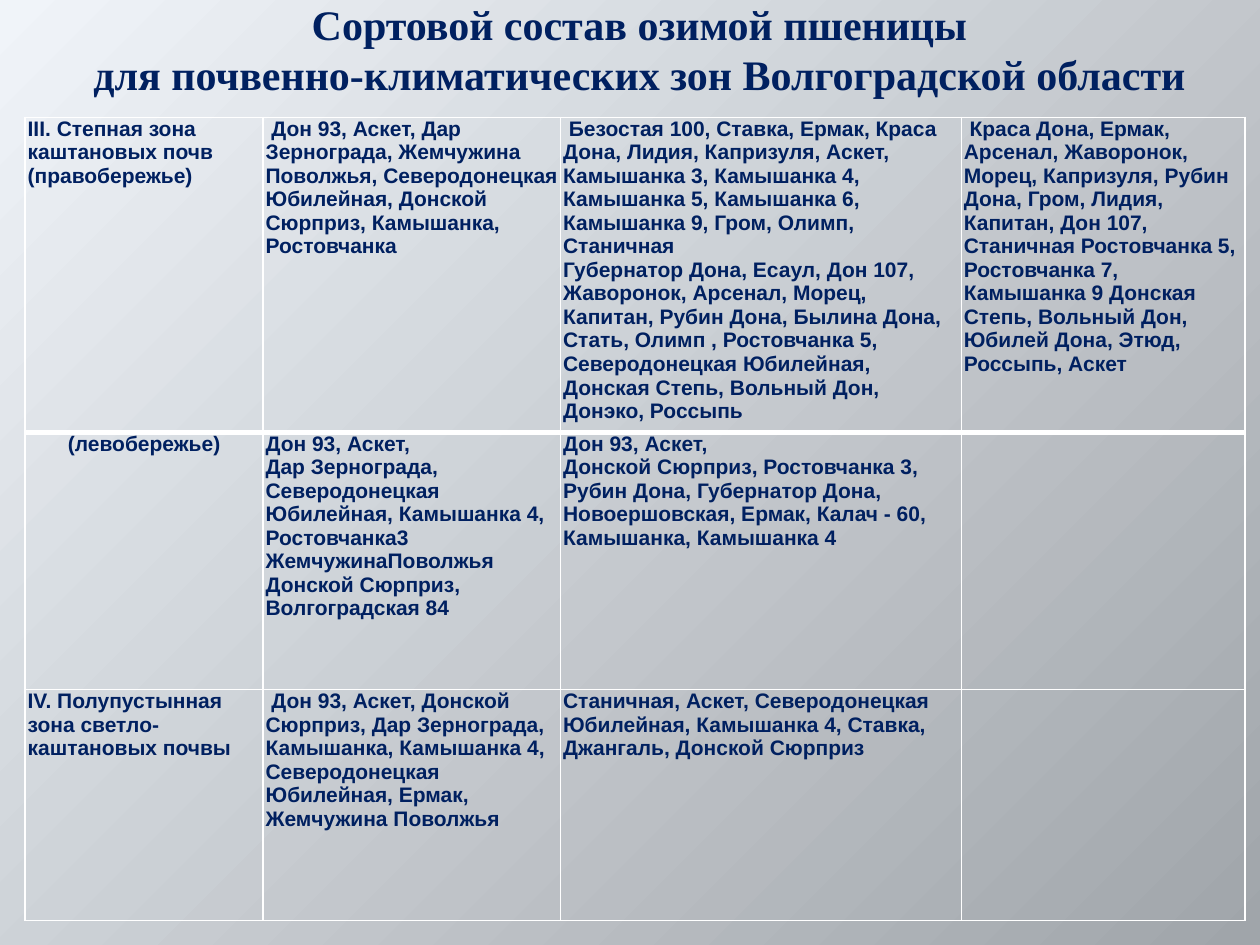
from lxml import etree
from pptx import Presentation
from pptx.dml.color import RGBColor
from pptx.enum.text import MSO_ANCHOR, PP_ALIGN
from pptx.oxml.ns import qn
from pptx.util import Pt

CENTER, LEFT = PP_ALIGN.CENTER, PP_ALIGN.LEFT
MIDDLE, TOP = MSO_ANCHOR.MIDDLE, MSO_ANCHOR.TOP

NAVY = RGBColor(0x00, 0x20, 0x60)
WHITE = RGBColor(0xFF, 0xFF, 0xFF)
PALE = RGBColor(0xF0, 0xF4, 0xF9)
GREY = RGBColor(0xA0, 0xA5, 0xAA)

TITLE = "Сортовой состав озимой пшеницы\vдля почвенно-климатических зон Волгоградской области"
COLUMN_WIDTHS = [136, 170, 229, 162]
ROW_HEIGHTS = [180, 147, 132]
ZONES = [
    [
        "III. Степная зона каштановых почв (правобережье)",
        " Дон 93, Аскет, Дар Зернограда, Жемчужина Поволжья, Северодонецкая Юбилейная, "
        "Донской Сюрприз, Камышанка, Ростовчанка",
        " Безостая 100, Ставка, Ермак, Краса Дона, Лидия, Капризуля, Аскет, Камышанка 3, "
        "Камышанка 4, Камышанка 5, Камышанка 6, Камышанка 9, Гром, Олимп, Станичная\n"
        "Губернатор Дона, Есаул, Дон 107, Жаворонок, Арсенал, Морец, Капитан, Рубин Дона, "
        "Былина Дона, Стать, Олимп , Ростовчанка 5, Северодонецкая Юбилейная, "
        "Донская Степь, Вольный Дон, Донэко, Россыпь",
        " Краса Дона, Ермак, Арсенал, Жаворонок, Морец, Капризуля, Рубин Дона, Гром, Лидия, "
        "Капитан, Дон 107, Станичная Ростовчанка 5, Ростовчанка 7,\n"
        "Камышанка 9 Донская Степь, Вольный Дон, Юбилей Дона, Этюд, Россыпь, Аскет",
    ],
    [
        "(левобережье)",
        "Дон 93, Аскет,\n"
        "Дар Зернограда, Северодонецкая Юбилейная, Камышанка 4, Ростовчанка3 ЖемчужинаПоволжья\n"
        "Донской Сюрприз, Волгоградская 84",
        "Дон 93, Аскет,\nДонской Сюрприз, Ростовчанка 3,\n"
        "Рубин Дона, Губернатор Дона, Новоершовская, Ермак, Калач - 60, Камышанка, Камышанка 4",
        "",
    ],
    [
        "IV. Полупустынная\nзона светло-каштановых почвы",
        " Дон 93, Аскет, Донской Сюрприз, Дар Зернограда, Камышанка, Камышанка 4, "
        "Северодонецкая Юбилейная, Ермак, Жемчужина Поволжья",
        "Станичная, Аскет, Северодонецкая Юбилейная, Камышанка 4, Ставка, Джангаль, Донской Сюрприз",
        "",
    ],
]


def write_text(frame, text, *, font, size, align=LEFT):
    frame.word_wrap = True
    frame.text = text
    for para in frame.paragraphs:
        para.alignment = align
        para.line_spacing = 1.0
        para.space_before = para.space_after = Pt(0)
        para.font.size = Pt(size)
        for span in para.runs:
            span.font.name = font
            span.font.size = Pt(size)
            span.font.bold = True
            span.font.color.rgb = NAVY


def set_insets(target, side, top):
    target.margin_left = target.margin_right = Pt(side)
    target.margin_top, target.margin_bottom = Pt(top), Pt(0)


def paint_background(page):
    """Fill the page with a gradient that spreads from the top left corner."""
    fill = page.background.fill
    fill.gradient()
    for stop, color, position in zip(fill.gradient_stops, (PALE, GREY), (0, 1)):
        stop.color.rgb = color
        stop.position = position
    linear = next(page.background._cSld.iter(qn("a:lin")))
    circle = etree.Element(qn("a:path"), path="circle")
    etree.SubElement(circle, qn("a:fillToRect"), r="100000", b="100000")
    linear.getparent().replace(linear, circle)


def set_borders(cell, widths):
    """Draw white lines; widths go left, right, top, bottom."""
    properties = cell._tc.get_or_add_tcPr()
    for index, (side, width) in enumerate(zip("LRTB", widths)):
        line = etree.Element(qn(f"a:ln{side}"), w=str(Pt(width)))
        fill = etree.SubElement(line, qn("a:solidFill"))
        etree.SubElement(fill, qn("a:srgbClr"), val=str(WHITE))
        properties.insert(index, line)


def place_title(page, left, top, width, height):
    box = page.shapes.title
    box.left, box.top, box.width, box.height = map(Pt, (left, top, width, height))
    frame = box.text_frame
    write_text(frame, TITLE, font="Times New Roman", size=24, align=CENTER)
    frame.vertical_anchor = MIDDLE
    set_insets(frame, side=7.2, top=3)


def place_zone_table(page, left, top):
    width, height = sum(COLUMN_WIDTHS), sum(ROW_HEIGHTS)
    table = page.shapes.add_table(
        len(ROW_HEIGHTS), len(COLUMN_WIDTHS), Pt(left), Pt(top), Pt(width), Pt(height)
    ).table
    table.first_row = table.horz_banding = False
    for column, column_width in zip(table.columns, COLUMN_WIDTHS):
        column.width = Pt(column_width)
    for row_index, (row, row_height) in enumerate(zip(table.rows, ROW_HEIGHTS)):
        row.height = Pt(row_height)
        upper = 3 if row_index == 1 else 1
        lower = 3 if row_index == 0 else 1
        for cell, text in zip(row.cells, ZONES[row_index]):
            align = CENTER if text == "(левобережье)" else LEFT
            write_text(cell.text_frame, text, font="Arial", size=12, align=align)
            cell.vertical_anchor = TOP
            set_insets(cell, side=1.44, top=0)
            cell.fill.background()
            set_borders(cell, (1, 1, upper, lower))


def main():
    deck = Presentation()
    deck.slide_width, deck.slide_height = Pt(720), Pt(540)
    page = deck.slides.add_slide(deck.slide_layouts[5])
    paint_background(page)
    place_title(page, 25.2, 0, 680.4, 52.5)
    place_zone_table(page, 14.4, 67)
    deck.save("out.pptx")


if __name__ == "__main__":
    main()
